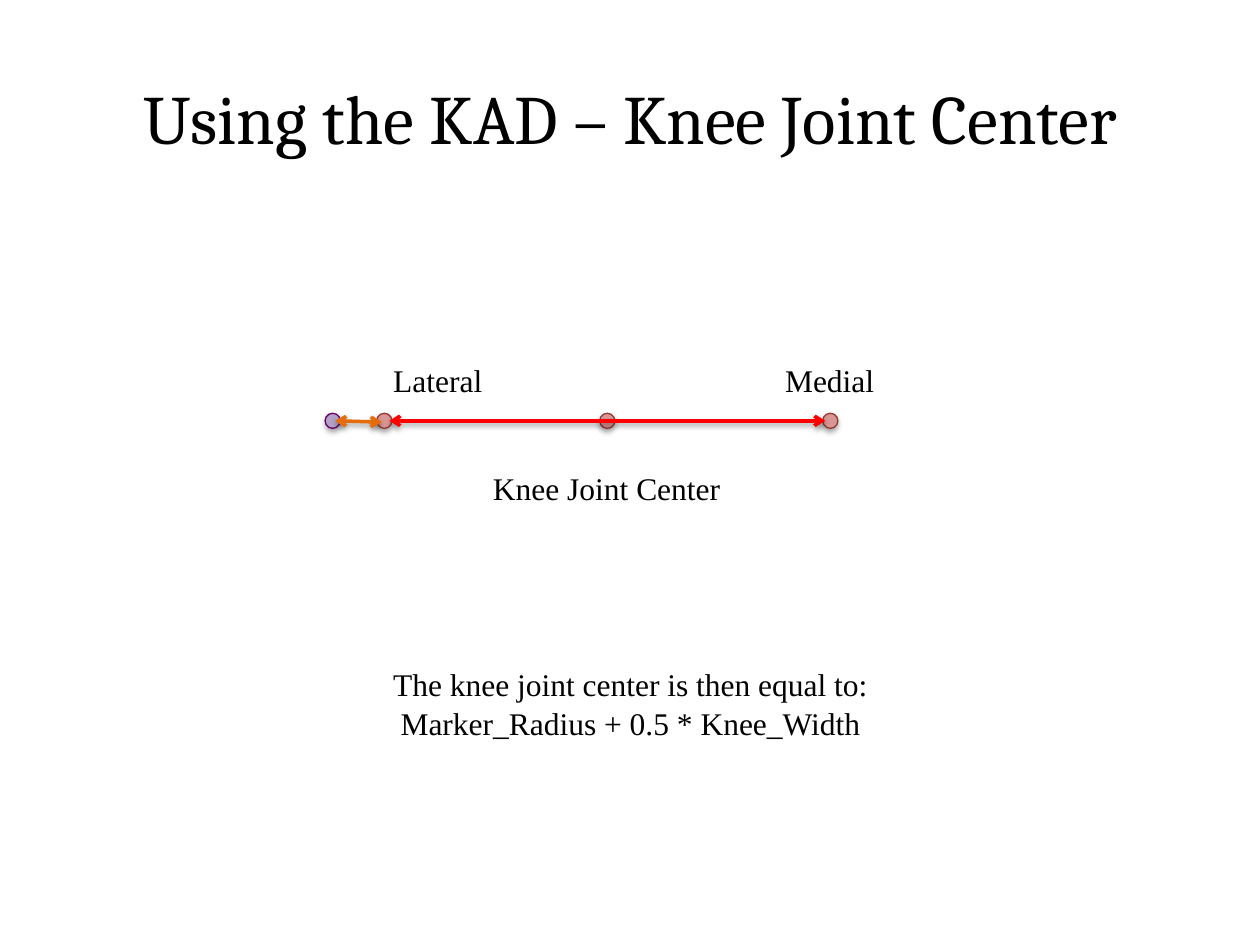
from dataclasses import dataclass

from lxml.etree import SubElement
from pptx import Presentation
from pptx.dml.color import RGBColor
from pptx.enum.shapes import MSO_CONNECTOR as Connector, MSO_SHAPE as Shape
from pptx.enum.text import MSO_ANCHOR as Anchor, PP_ALIGN as Align
from pptx.oxml.ns import qn
from pptx.util import Inches, Pt


@dataclass(frozen=True)
class Theme:
    title_font: str = "Cambria"
    body_font: str = "Times New Roman"
    title_size: float = 39.6
    body_size: float = 18
    body_spacing: float = 1.05
    text: str = "000000"
    joint_fill: str = "D99694"
    joint_line: str = "953735"
    marker_fill: str = "B3A2C7"
    marker_line: str = "660066"
    knee_width: str = "FF0000"
    marker_radius: str = "E46C0A"
    outline: float = 0.75
    arrow: float = 2


@dataclass(frozen=True)
class Label:
    lines: tuple[str, ...]
    left: float
    top: float
    width: float
    height: float


@dataclass(frozen=True)
class Dot:
    center: float
    fill: str
    line: str


@dataclass(frozen=True)
class Span:
    start: float
    end: float
    end_y: float
    color: str


THEME = Theme()
AXIS_Y = 3.34
DOT_SIZE = 0.12
LATERAL_X, MEDIAL_X = 3.05, 6.59
MARKER_X = 2.64
CENTER_X = (LATERAL_X + MEDIAL_X) / 2

TITLE = Label(("Using the KAD – Knee Joint Center",), 0.5, 0.3, 9, 1.25)
LABELS = (
    Label(("Lateral",), 2.99, 2.8, 0.97, 0.41),
    Label(("Medial",), 6.1, 2.8, 0.97, 0.41),
    Label(("Knee Joint Center",), 3.56, 3.66, 2.51, 0.4),
    Label(("The knee joint center is then equal to:",
           "Marker_Radius + 0.5 * Knee_Width"), 2.24, 5.21, 5.53, 0.71),
)
DOTS = (
    *(Dot(x, THEME.joint_fill, THEME.joint_line)
      for x in (LATERAL_X, CENTER_X, MEDIAL_X)),
    Dot(MARKER_X, THEME.marker_fill, THEME.marker_line),
)
SPANS = (
    Span(3.09, 6.55, AXIS_Y, THEME.knee_width),
    Span(2.66, 3.03, 3.35, THEME.marker_radius),
)


def rgb(color: str) -> RGBColor:
    return RGBColor.from_string(color)


def add_shadow(properties, distance: float, opacity: int) -> None:
    """Cast a soft shadow straight down; opacity is in percent."""
    effects = SubElement(properties, qn("a:effectLst"))
    shadow = SubElement(effects, qn("a:outerShdw"), blurRad=str(Pt(3.1)),
                        dist=str(Pt(distance)), dir="5400000", rotWithShape="0")
    color = SubElement(shadow, qn("a:srgbClr"), val="000000")
    SubElement(color, qn("a:alpha"), val=str(opacity * 1000))


def add_label(slide, label: Label, font: str, size: float,
              anchor: Anchor, spacing: float) -> None:
    box = slide.shapes.add_textbox(Inches(label.left), Inches(label.top),
                                   Inches(label.width), Inches(label.height))
    frame = box.text_frame
    frame.word_wrap = True
    frame.vertical_anchor = anchor
    for index, line in enumerate(label.lines):
        paragraph = frame.add_paragraph() if index else frame.paragraphs[0]
        paragraph.alignment = Align.CENTER
        paragraph.line_spacing = spacing
        run = paragraph.add_run()
        run.text = line
        run.font.name = font
        run.font.size = Pt(size)
        run.font.color.rgb = rgb(THEME.text)


def add_dot(slide, dot: Dot) -> None:
    ellipse = slide.shapes.add_shape(
        Shape.OVAL, Inches(dot.center - DOT_SIZE / 2),
        Inches(AXIS_Y - DOT_SIZE / 2), Inches(DOT_SIZE), Inches(DOT_SIZE))
    ellipse.fill.solid()
    ellipse.fill.fore_color.rgb = rgb(dot.fill)
    ellipse.line.color.rgb = rgb(dot.line)
    ellipse.line.width = Pt(THEME.outline)
    add_shadow(ellipse._element.spPr, 1.8, 35)


def add_span(slide, span: Span) -> None:
    """Draw a double-headed arrow that measures a distance."""
    arrow = slide.shapes.add_connector(
        Connector.STRAIGHT, Inches(span.start), Inches(AXIS_Y),
        Inches(span.end), Inches(span.end_y))
    arrow.line.color.rgb = rgb(span.color)
    arrow.line.width = Pt(THEME.arrow)
    properties = arrow._element.spPr
    for end in ("a:headEnd", "a:tailEnd"):
        SubElement(properties.find(qn("a:ln")), qn(end), type="arrow")
    add_shadow(properties, 1.6, 38)


def main() -> None:
    deck = Presentation()
    deck.slide_width, deck.slide_height = Inches(10), Inches(7.5)
    slide = deck.slides.add_slide(deck.slide_layouts[6])
    add_label(slide, TITLE, THEME.title_font, THEME.title_size, Anchor.MIDDLE, 1.0)
    for dot in DOTS:
        add_dot(slide, dot)
    for label in LABELS:
        add_label(slide, label, THEME.body_font, THEME.body_size,
                  Anchor.TOP, THEME.body_spacing)
    for span in SPANS:
        add_span(slide, span)
    deck.save("out.pptx")


if __name__ == "__main__":
    main()
